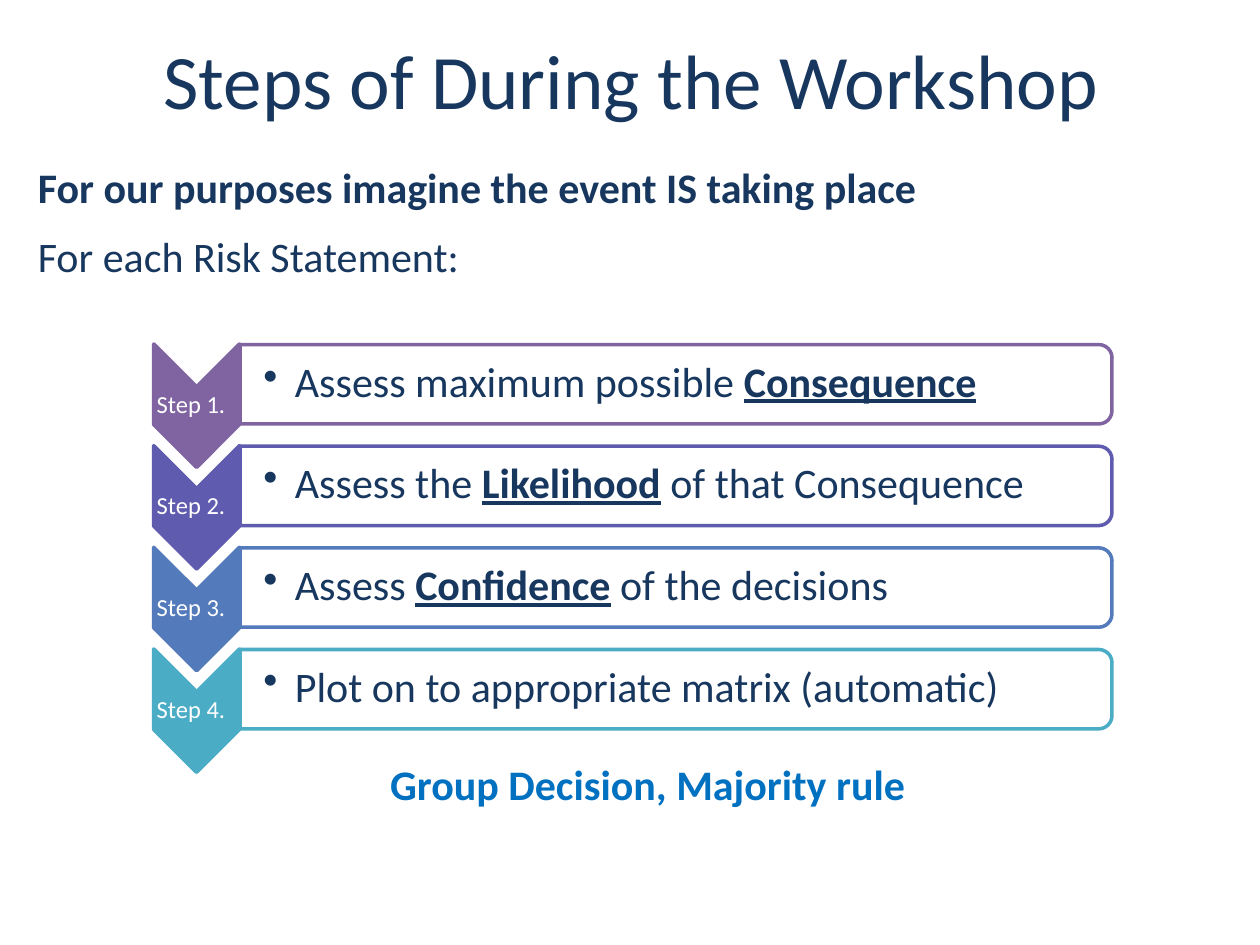
from lxml import etree
from pptx import Presentation
from pptx import util as u
from pptx.dml.color import RGBColor
from pptx.enum import shapes, text
from pptx.oxml.ns import qn

COLORS = {
    "ink": "17375E", "accent": "0070C0", "white": "FFFFFF",
    "purple": "8064A2", "indigo": "5F5BAE", "blue": "537ABA", "teal": "4BACC6",
}
COLUMNS, ROWS = 100, 75  # grid over the whole slide

# Each step: colour, then (wording, emphasised) pieces
STEPS = [
    ("purple", [("Assess maximum possible ", False), ("Consequence", True)]),
    ("indigo", [("Assess the ", False), ("Likelihood", True),
                (" of that Consequence", False)]),
    ("blue", [("Assess ", False), ("Confidence", True),
              (" of the decisions", False)]),
    ("teal", [("Plot on to appropriate matrix (automatic)", False)]),
]
STEP_PITCH = 24.2 / 3


def add_span(para, wording, size=24, color="ink", bold=False, underline=False):
    span = para.add_run()
    span.text = wording
    font = span.font
    font.name, font.size = "Calibri", u.Pt(size)
    font.bold, font.underline = bold, underline
    font.color.rgb = RGBColor.from_string(COLORS[color])


def set_bullet(para, char=None, margin=0, indent=0):
    props = para._p.get_or_add_pPr()
    props.set("marL", str(u.Inches(margin)))
    props.set("indent", str(u.Inches(indent)))
    bullet = etree.SubElement(props, qn("a:buChar" if char else "a:buNone"))
    if char:
        bullet.set("char", char)


class SlideBuilder:
    def __init__(self, deck):
        self.deck = deck
        self.page = deck.slides.add_slide(deck.slide_layouts[1])

    def x(self, columns):
        return round(self.deck.slide_width * columns / COLUMNS)

    def y(self, rows):
        return round(self.deck.slide_height * rows / ROWS)

    def place(self, box, left, top, width, height):
        box.left, box.top = self.x(left), self.y(top)
        box.width, box.height = self.x(width), self.y(height)
        box.text_frame.auto_size = text.MSO_AUTO_SIZE.NONE

    def title(self, wording):
        box = self.page.shapes.title
        self.place(box, 5.1, 0, 90, 12.5)
        para = box.text_frame.paragraphs[0]
        para.alignment = text.PP_ALIGN.CENTER
        add_span(para, wording, size=44)

    def body(self):
        box = self.page.placeholders[1]
        self.place(box, 2, 12.3, 94.4, 58.6)
        frame = box.text_frame
        lead, intro, closing = (frame.paragraphs[0], frame.add_paragraph(),
                                frame.add_paragraph())
        for para in (lead, intro):
            para.space_after = u.Pt(6)
            set_bullet(para)
        add_span(lead, "For our purposes imagine the event IS taking place",
                 bold=True)
        add_span(intro, "For each Risk Statement:")
        # The closing line sits below the steps
        closing.alignment = text.PP_ALIGN.CENTER
        closing.space_before = u.Pt(267)
        set_bullet(closing, margin=0.49, indent=-0.05)
        add_span(closing, "Group Decision, Majority rule", color="accent",
                 bold=True)

    def turned_shape(self, kind, center_x, center_y, width, height, fill, line):
        """Preset turned a quarter, centred on a grid point."""
        shape = self.page.shapes.add_shape(
            kind, self.x(center_x - width / 2), self.y(center_y - height / 2),
            self.x(width), self.y(height))
        shape.rotation = 90
        shape.shadow.inherit = False
        shape.fill.solid()
        shape.fill.fore_color.rgb = RGBColor.from_string(COLORS[fill])
        shape.line.color.rgb = RGBColor.from_string(COLORS[line])
        shape.line.width = u.Pt(2)

    def label(self, left, top, width, height, insets):
        box = self.page.shapes.add_textbox(0, 0, 0, 0)
        self.place(box, left, top, width, height)
        frame = box.text_frame
        frame.word_wrap = True
        frame.vertical_anchor = text.MSO_ANCHOR.MIDDLE
        frame.margin_left, frame.margin_right = map(u.Inches, insets)
        frame.margin_top = frame.margin_bottom = u.Inches(0.01)
        para = frame.paragraphs[0]
        para.line_spacing = 0.9
        return para

    def step(self, number, color, pieces):
        drop = (number - 1) * STEP_PITCH
        # Chevron with its number
        self.turned_shape(shapes.MSO_SHAPE.CHEVRON, 15.6, 32.2 + drop,
                          9.8, 6.8, color, color)
        para = self.label(12.2, 30.7 + drop, 6.8, 2.9, (0.01, 0.1))
        para.alignment = text.PP_ALIGN.CENTER
        add_span(para, f"Step {number}.", size=14, color="white")
        # Bar with its wording
        self.turned_shape(shapes.MSO_SHAPE.ROUND_2_SAME_RECTANGLE, 53.65,
                          30.5 + drop, 6.3, 69.2, "white", color)
        para = self.label(19, 27.6 + drop, 68.9, 5.7, (0.19, 0.02))
        set_bullet(para, "•", margin=0.25, indent=-0.25)
        for wording, strong in pieces:
            add_span(para, wording, bold=strong, underline=strong)


def main():
    deck = Presentation()
    deck.slide_width, deck.slide_height = u.Inches(10), u.Inches(7.5)
    builder = SlideBuilder(deck)
    builder.title("Steps of During the Workshop")
    builder.body()
    for number, (color, pieces) in enumerate(STEPS, 1):
        builder.step(number, color, pieces)
    deck.save("out.pptx")


if __name__ == "__main__":
    main()
